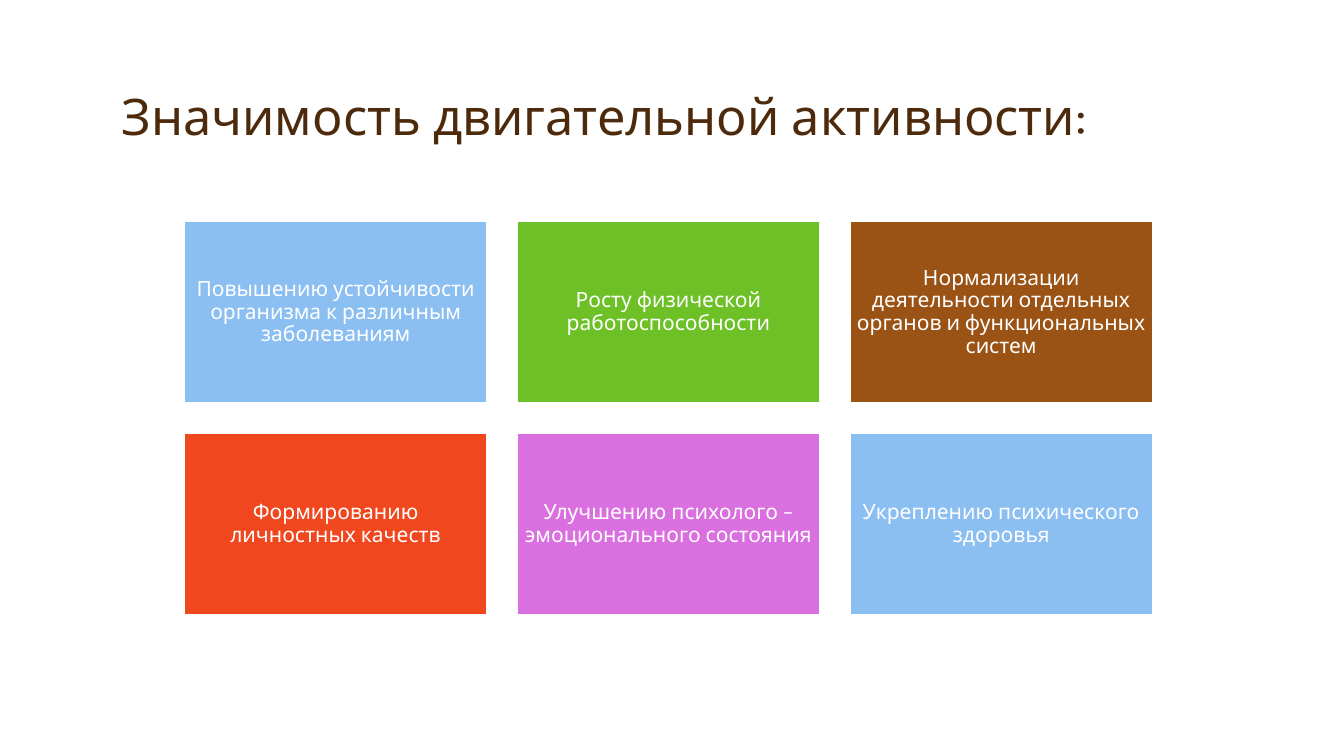
from pptx import Presentation
from pptx.dml.color import RGBColor
from pptx.enum.shapes import MSO_SHAPE as Shape
from pptx.enum.text import MSO_ANCHOR as Anchor, PP_ALIGN as Align
from pptx.util import Inches, Pt

FONT = "Karla"
COLUMNS = 3
CARD_WIDTH, CARD_HEIGHT, GAP = 3, 1.8, 0.3
BENEFITS = [
    ("Повышению устойчивости организма к различным заболеваниям", "8BBEF1"),
    ("Росту физической работоспособности", "6DC025"),
    ("Нормализации деятельности отдельных органов и функциональных систем", "9A5315"),
    ("Формированию личностных качеств", "F1471F"),
    ("Улучшению психолого – эмоционального состояния", "DA6FDF"),
    ("Укреплению психического здоровья", "8BBEF1"),
]


def color(value):
    return RGBColor.from_string(value)


def write(frame, text, size, tint, align, anchor):
    """Fill a text frame with one paragraph."""
    frame.word_wrap = True
    frame.vertical_anchor = anchor
    para = frame.paragraphs[0]
    para.alignment = align
    para.line_spacing = 0.9
    span = para.add_run()
    span.text = text
    span.font.name = FONT
    span.font.size = Pt(size)
    span.font.color.rgb = color(tint)


def add_title(page, left, top, width, height):
    box = page.shapes.add_textbox(Inches(left), Inches(top), Inches(width), Inches(height))
    write(box.text_frame, "Значимость двигательной активности:", 36, "4D2A0B",
          Align.LEFT, Anchor.BOTTOM)


def add_card(page, left, top, text, fill):
    card = page.shapes.add_shape(Shape.RECTANGLE, Inches(left), Inches(top),
                                 Inches(CARD_WIDTH), Inches(CARD_HEIGHT))
    card.shadow.inherit = False
    card.fill.solid()
    card.fill.fore_color.rgb = color(fill)
    card.line.color.rgb = color("FFFFFF")
    card.line.width = Pt(1)
    frame = card.text_frame
    frame.margin_left = frame.margin_right = Inches(0.06)
    frame.margin_top = frame.margin_bottom = Inches(0.06)
    write(frame, text, 15, "FFFFFF", Align.CENTER, Anchor.MIDDLE)


def add_benefits(page, left, top):
    for index, (text, fill) in enumerate(BENEFITS):
        row, column = divmod(index, COLUMNS)
        add_card(page, left + column * (CARD_WIDTH + GAP),
                 top + row * (CARD_HEIGHT + GAP), text, fill)


def main():
    deck = Presentation()
    deck.slide_width, deck.slide_height = Inches(13.33), Inches(7.5)
    page = deck.slides.add_slide(deck.slide_layouts[6])
    add_benefits(page, 1.83, 2.2)
    add_title(page, 1.11, 0.17, 11, 1.33)
    deck.save("out.pptx")


if __name__ == "__main__":
    main()
